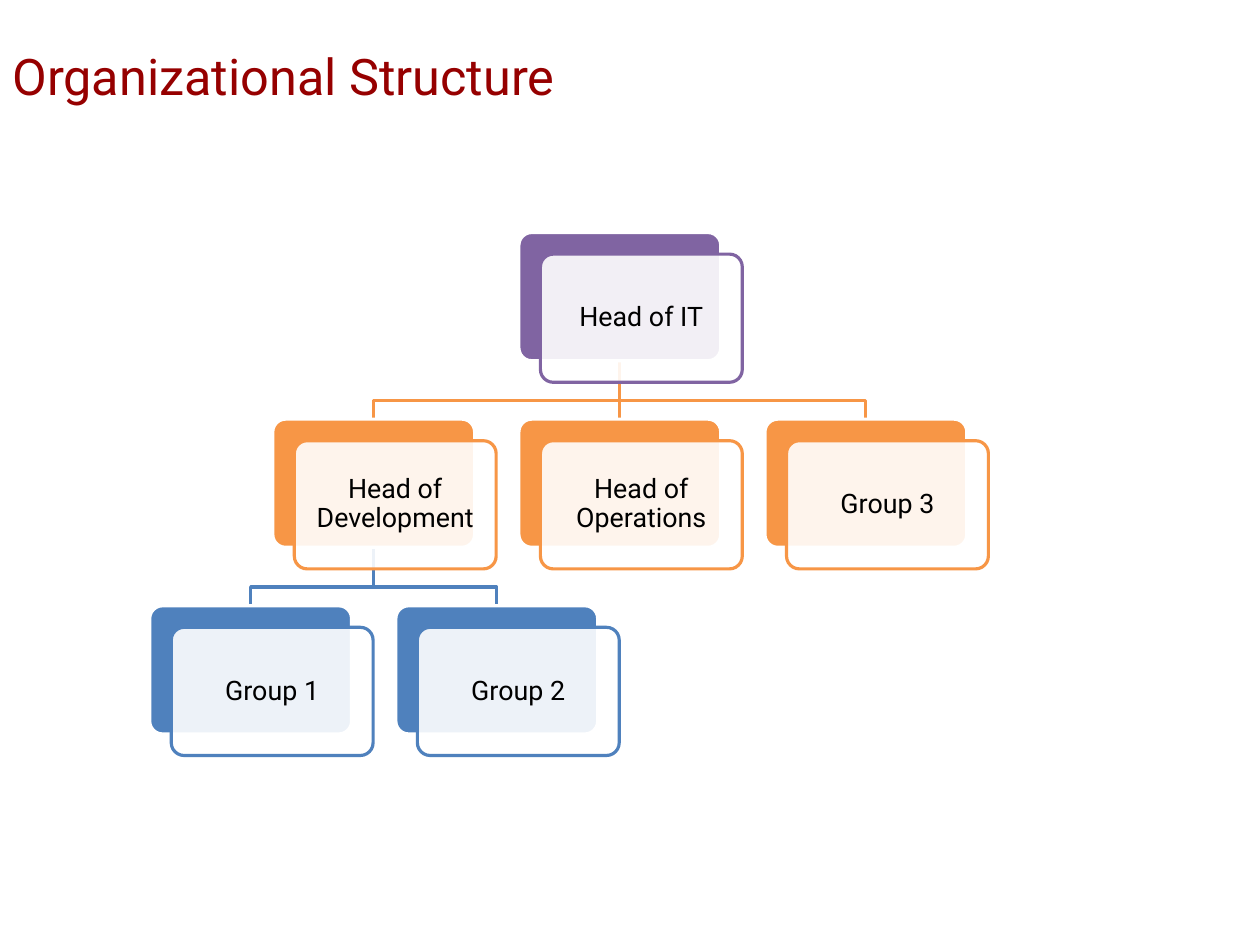
from dataclasses import dataclass

from lxml.etree import SubElement
from pptx import Presentation
from pptx.dml.color import RGBColor as Rgb
from pptx.enum.shapes import MSO_CONNECTOR as Connector, MSO_SHAPE as Preset
from pptx.enum.text import MSO_ANCHOR as Anchor, PP_ALIGN as Align
from pptx.oxml.ns import qn
from pptx.util import Inches, Pt


@dataclass(frozen=True)
class Theme:
    font: str = "Roboto"
    title_size: float = 32
    card_size: float = 17
    line_width: float = 2
    title: str = "960000"
    text: str = "000000"
    paper: str = "FFFFFF"
    levels: tuple = ("8064A2", "F79646", "4F81BD")


THEME = Theme()
SLIDE_W, SLIDE_H = 11.11, 8.33
GRID_LEFT, GRID_TOP = 1.32, 2.05
COLUMN, ROW = 2.17 / 2, 3.29 / 2  # columns are half a card pitch wide
CARD_W, CARD_H = 1.78, 1.13
OFFSET = 0.19
BRANCH = 0.35  # drop from a parent card to the crossbar

# name: (column, row, parent)
UNITS = {
    "Head of IT": (3, 0, None),
    "Head of Development": (1, 1, "Head of IT"),
    "Group 1": (0, 2, "Head of Development"),
    "Group 2": (2, 2, "Head of Development"),
    "Head of Operations": (3, 1, "Head of IT"),
    "Group 3": (5, 1, "Head of IT"),
}


def write(shape, text, size, color, align=Align.LEFT, margins=(0.07, 0.07), spacing=1.0):
    frame = shape.text_frame
    frame.word_wrap = True
    frame.vertical_anchor = Anchor.MIDDLE
    frame.margin_left = frame.margin_right = Inches(margins[0])
    frame.margin_top = frame.margin_bottom = Inches(margins[1])
    paragraph = frame.paragraphs[0]
    paragraph.text = text
    paragraph.alignment = align
    paragraph.line_spacing = spacing
    font = paragraph.font
    font.name, font.size = THEME.font, Pt(size)
    font.color.rgb = Rgb.from_string(color)


def set_line(shape, color):
    shape.line.color.rgb = Rgb.from_string(color)
    shape.line.width = Pt(THEME.line_width)


def add_panel(slide, left, top, fill, line, opacity=100):
    panel = slide.shapes.add_shape(
        Preset.ROUNDED_RECTANGLE, Inches(left), Inches(top), Inches(CARD_W), Inches(CARD_H))
    panel.adjustments[0] = 0.1
    panel.shadow.inherit = False
    panel.fill.solid()
    panel.fill.fore_color.rgb = Rgb.from_string(fill)
    set_line(panel, line)
    if opacity < 100:
        fill_color = panel.fill._xPr.find(qn("a:solidFill")).find(qn("a:srgbClr"))
        SubElement(fill_color, qn("a:alpha"), val=str(opacity * 1000))
    return panel


def add_card(slide, name, column, row):
    """Draw a coloured panel with a labelled, offset panel over it; return the lower one."""
    left, top = GRID_LEFT + column * COLUMN, GRID_TOP + row * ROW
    color = THEME.levels[row]
    base = add_panel(slide, left, top, color, THEME.paper)
    label = add_panel(slide, left + OFFSET, top + OFFSET, THEME.paper, color, opacity=90)
    write(label, name, THEME.card_size, THEME.text, Align.CENTER, spacing=0.9)
    return base


def add_branch(slide, parent, child, color):
    """Link two cards, straight or by a crossbar, behind everything else."""
    x1, y1 = parent.left + parent.width // 2, parent.top + parent.height
    x2, y2 = child.left + child.width // 2, child.top
    if x1 == x2:
        branch = slide.shapes.add_connector(Connector.STRAIGHT, x1, y1, x2, y2)
        branch.begin_connect(parent, 2)
        branch.end_connect(child, 0)
        set_line(branch, color)
        SubElement(branch.element.spPr, qn("a:effectLst"))
    else:
        bar = y1 + Inches(BRANCH)
        outline = slide.shapes.build_freeform(x1, y1)
        outline.add_line_segments([(x1, bar), (x2, bar), (x2, y2)], close=False)
        branch = outline.convert_to_shape()
        branch.fill.background()
        branch.shadow.inherit = False
        set_line(branch, color)
    branch.element.getparent().insert(2, branch.element)


def main():
    deck = Presentation()
    deck.slide_width, deck.slide_height = Inches(SLIDE_W), Inches(SLIDE_H)
    slide = deck.slides.add_slide(deck.slide_layouts[6])

    title = slide.shapes.add_textbox(0, 0, Inches(SLIDE_W * 0.757), Inches(SLIDE_H * 0.16))
    write(title, "Organizational Structure", THEME.title_size, THEME.title, margins=(0.11, 0.06))

    cards = {name: add_card(slide, name, column, row)
             for name, (column, row, _) in UNITS.items()}
    for name, (_, row, parent) in UNITS.items():
        if parent:
            add_branch(slide, cards[parent], cards[name], THEME.levels[row])

    deck.save("out.pptx")


if __name__ == "__main__":
    main()
